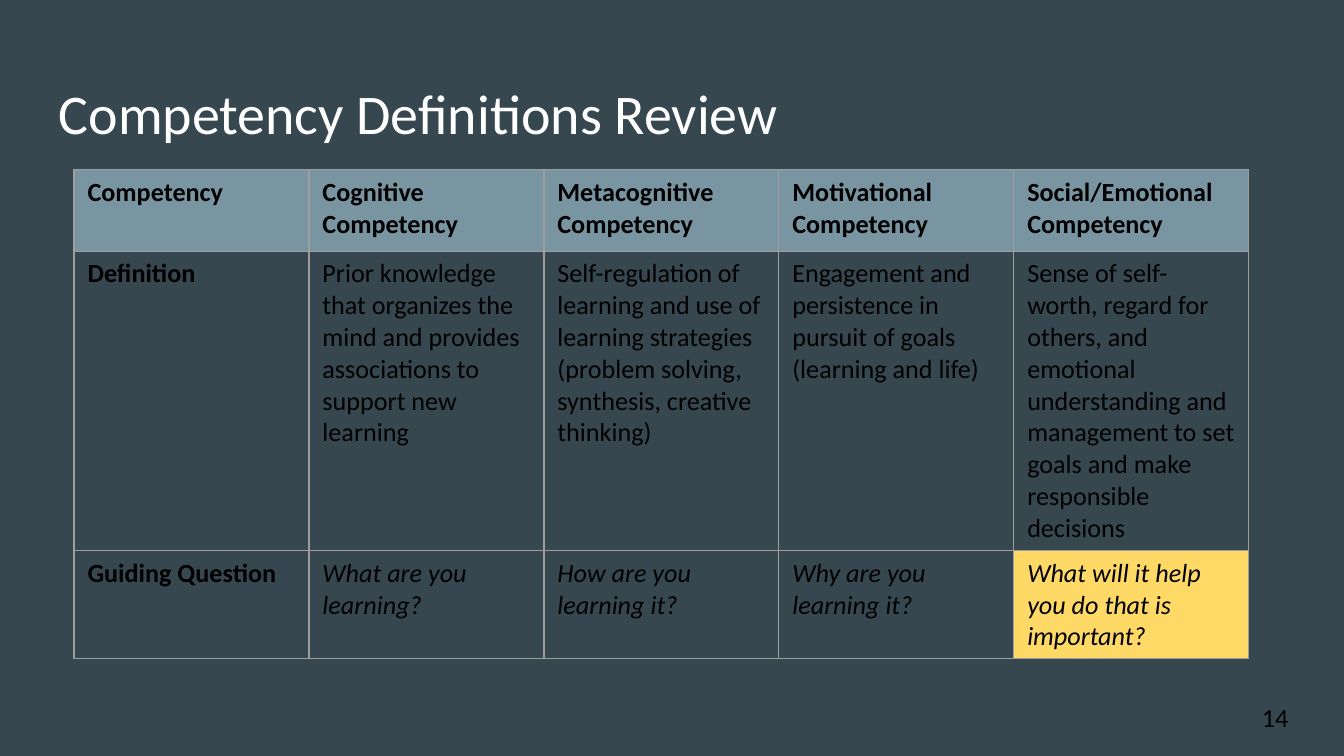
"""Build the competency definitions review slide."""
from lxml import etree
from pptx import Presentation
from pptx.dml.color import RGBColor
from pptx.enum.text import MSO_ANCHOR
from pptx.oxml.ns import qn
from pptx.util import Cm, Pt

TOP, MIDDLE = MSO_ANCHOR.TOP, MSO_ANCHOR.MIDDLE
SLATE = RGBColor(0x37, 0x47, 0x4F)
BLUE_GREY = RGBColor(0x7A, 0x95, 0xA2)
YELLOW = RGBColor(0xFF, 0xD9, 0x66)
GREY = RGBColor(0x9E, 0x9E, 0x9E)
WHITE = RGBColor(0xFF, 0xFF, 0xFF)
BLACK = RGBColor(0, 0, 0)

ROWS = [
    ["Competency", "Cognitive Competency", "Metacognitive Competency",
     "Motivational Competency", "Social/Emotional Competency"],
    ["Definition",
     "Prior knowledge that organizes the mind and provides associations to support new learning",
     "Self-regulation of learning and use of learning strategies "
     "(problem solving, synthesis, creative thinking)",
     "Engagement and persistence in pursuit of goals (learning and life)",
     "Sense of self-worth, regard for others, and emotional understanding "
     "and management to set goals and make responsible decisions"],
    ["Guiding Question", "What are you learning?", "How are you learning it?",
     "Why are you learning it?", "What will it help you do that is important?"],
]
ROW_HEIGHTS = [1.54, 5.66, 2.04]
COL_WIDTH = 4.44
FILLS = {(0, c): BLUE_GREY for c in range(5)} | {(2, 4): YELLOW}


def add_run(tf, text, size, color, bold=False, italic=False):
    r = tf.paragraphs[0].add_run()
    r.text = text
    r.font.name = "Calibri"
    r.font.size = Pt(size)
    r.font.color.rgb = color
    r.font.bold = bold
    r.font.italic = italic


def add_borders(cell):
    tcPr = cell._tc.get_or_add_tcPr()
    for side in ("lnL", "lnR", "lnT", "lnB"):
        ln = etree.SubElement(tcPr, qn(f"a:{side}"), w=str(Pt(0.75)))
        fill = etree.SubElement(ln, qn("a:solidFill"))
        etree.SubElement(fill, qn("a:srgbClr"), val=str(GREY))


prs = Presentation()
prs.slide_width, prs.slide_height = Cm(25.4), Cm(14.29)
s = prs.slides.add_slide(prs.slide_layouts[6])
s.background.fill.solid()
s.background.fill.fore_color.rgb = SLATE

for text, box, size, color, anchor in [
    ("Competency Definitions Review", (0.86, 1.24, 23.67, 1.6), 30, WHITE, TOP),
    ("14", (23.6, 13, 1.52, 1.09), 14, BLACK, MIDDLE),
]:
    tf = s.shapes.add_textbox(*map(Cm, box)).text_frame
    tf.word_wrap = True
    tf.vertical_anchor = anchor
    tf.margin_left = tf.margin_right = tf.margin_top = tf.margin_bottom = Cm(0.25)
    add_run(tf, text, size, color)

table = s.shapes.add_table(
    3, 5, Cm(1.4), Cm(3.21), Cm(5 * COL_WIDTH), Cm(sum(ROW_HEIGHTS))).table
for col in table.columns:
    col.width = Cm(COL_WIDTH)
for row, height in zip(table.rows, ROW_HEIGHTS):
    row.height = Cm(height)

for i, texts in enumerate(ROWS):
    for j, text in enumerate(texts):
        cell = table.cell(i, j)
        add_borders(cell)
        if (i, j) in FILLS:
            cell.fill.solid()
            cell.fill.fore_color.rgb = FILLS[i, j]
        else:
            cell.fill.background()
        heading = i == 0 or j == 0
        add_run(cell.text_frame, text, 14, BLACK, bold=heading,
                italic=i == 2 and not heading)

prs.save("out.pptx")
